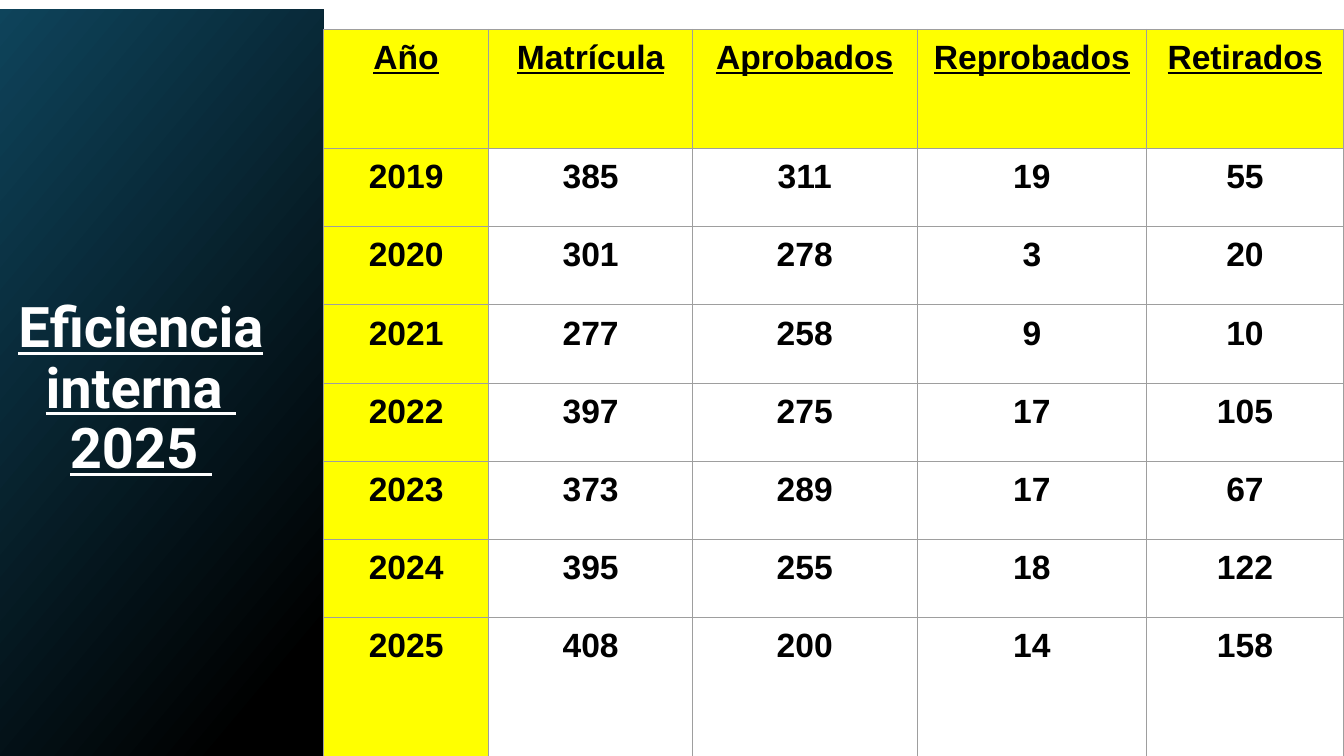
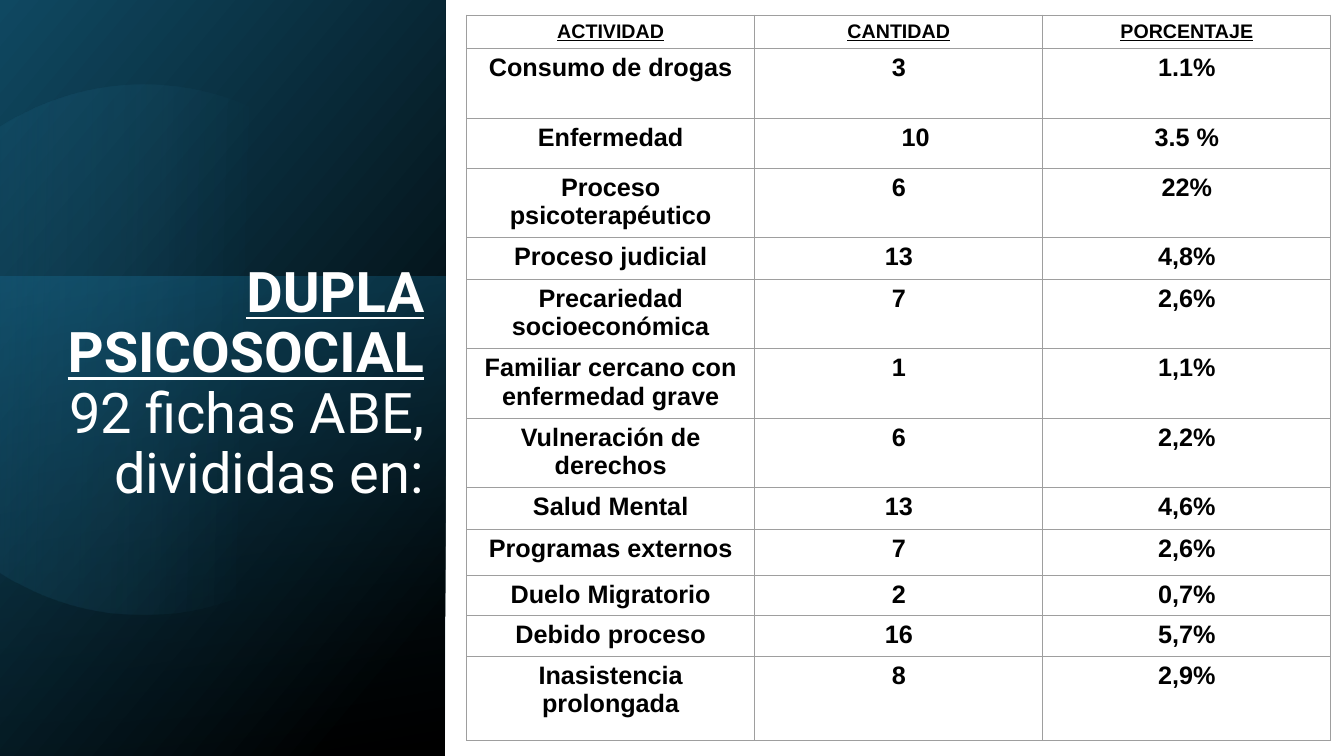
from math import cos, radians, sin

from lxml.etree import SubElement
from pptx import Presentation
from pptx.dml.color import RGBColor as RGB
from pptx.enum.shapes import MSO_SHAPE as SHAPE
from pptx.enum.text import MSO_ANCHOR as ANCHOR, MSO_AUTO_SIZE as AUTO, PP_ALIGN as ALIGN
from pptx.oxml.ns import qn
from pptx.util import Cm, Pt

HUE = {"white": "FFFFFF", "black": "000000", "yellow": "FFFF00", "rule": "9E9E9E",
       "navy": "0F4861", "teal": "156082", "deep": "0A3041", "sky": "43AFE2"}

# Gradient stops: position %, colour, opacity %
PANEL = [(0, "black", 100), (11, "black", 100), (100, "navy", 100)]
GLOW = [(0, "teal", 49), (100, "deep", 0)]
DISC = [(0, "sky", 0), (39, "sky", 0), (100, "navy", 25)]

YEARS = [
    ("Año", "Matrícula", "Aprobados", "Reprobados", "Retirados"),
    ("2019", "385", "311", "19", "55"),
    ("2020", "301", "278", "3", "20"),
    ("2021", "277", "258", "9", "10"),
    ("2022", "397", "275", "17", "105"),
    ("2023", "373", "289", "17", "67"),
    ("2024", "395", "255", "18", "122"),
    ("2025", "408", "200", "14", "158"),
]
CASES = [
    ("ACTIVIDAD", "CANTIDAD", "PORCENTAJE"),
    ("Consumo de drogas", "3", "1.1%"),
    ("Enfermedad", "10", "3.5 %"),
    ("Proceso psicoterapéutico", "6", "22%"),
    ("Proceso judicial", "13", "4,8%"),
    ("Precariedad socioeconómica", "7", "2,6%"),
    ("Familiar cercano con enfermedad grave", "1", "1,1%"),
    ("Vulneración de derechos", "6", "2,2%"),
    ("Salud Mental", "13", "4,6%"),
    ("Programas externos", "7", "2,6%"),
    ("Duelo Migratorio", "2", "0,7%"),
    ("Debido proceso", "16", "5,7%"),
    ("Inasistencia prolongada", "8", "2,9%"),
]
# Title lines: text, bold and underlined
YEAR_HEAD = [("Eficiencia interna ", True), ("2025 ", True)]
CASE_HEAD = [("DUPLA PSICOSOCIAL", True), ("92 fichas ABE, divididas en:", False)]

YEAR_COLS = [4.17, 5.13, 5.66, 5.79, 4.95]
YEAR_ROWS = [3] + [1.97] * 6 + [3.51]
CASE_COLS = [7.26] * 3
CASE_ROWS = [0.84, 1.76, 1.26, 1.75, 1.05, 1.75, 1.75, 1.75, 1.06, 1.16, 1.01, 1.01, 2.12]


def color(name):
    return RGB.from_string(HUE[name])


def style(run, font, size, hue, bold, under):
    f = run.font
    f.name, f.size, f.bold, f.underline = font, Pt(size), bold, under
    f.color.rgb = color(hue)


def shade(shape, stops, angle, turn, title):
    """Fill with a gradient, rotate, and place behind the title."""
    shape.shadow.inherit = False
    shape.line.fill.background()
    shape.fill.gradient()
    shape.fill.gradient_angle = angle
    grades = shape._element.spPr.find(".//" + qn("a:gsLst"))
    for old in list(grades):
        grades.remove(old)
    for pos, hue, alpha in stops:
        stop = SubElement(grades, qn("a:gs"), pos=str(pos * 1000))
        tint = SubElement(stop, qn("a:srgbClr"), val=HUE[hue])
        if alpha < 100:
            SubElement(tint, qn("a:alpha"), val=str(alpha * 1000))
    shape.rotation = turn
    title._element.addprevious(shape._element)


def add_rect(slide, box):
    return slide.shapes.add_shape(SHAPE.RECTANGLE, *map(Cm, box))


def add_panel(slide, box):
    rect = add_rect(slide, box)
    rect._element.spPr.find(qn("a:xfrm")).set("flipH", "1")
    shade(rect, PANEL, 310, 90, slide.shapes.title)


def add_disc(slide, x, y, radius, start, end, steps=120):
    """Draw a circle cut off by the chord between two angles."""
    turns = [radians(start + (end - start) * i / steps) for i in range(steps + 1)]
    dots = [(Cm(x + radius * cos(t)), Cm(y + radius * sin(t))) for t in turns]
    path = slide.shapes.build_freeform(*dots[0])
    path.add_line_segments(dots[1:], close=True)
    shade(path.convert_to_shape(), DISC, 280, 101.6, slide.shapes.title)


def set_title(slide, lines, box, align, top=0.13):
    title = slide.shapes.title
    title.left, title.top, title.width, title.height = map(Cm, box)
    frame = title.text_frame
    frame.word_wrap, frame.auto_size = True, AUTO.NONE
    frame.vertical_anchor = ANCHOR.MIDDLE
    frame.margin_left = frame.margin_right = Cm(0.25)
    frame.margin_top, frame.margin_bottom = Cm(top), Cm(0.13)
    para = frame.paragraphs[0]
    para.alignment, para.line_spacing = align, 0.9
    for i, (text, strong) in enumerate(lines):
        if i:
            para.add_line_break()
        run = para.add_run()
        run.text = text
        style(run, "Roboto", 40, "white", strong, strong)


def set_cell(cell, text, size, under, pad, fill):
    cell.margin_left = cell.margin_right = Cm(0.25)
    cell.margin_top = cell.margin_bottom = Cm(pad)
    para = cell.text_frame.paragraphs[0]
    para.alignment = ALIGN.CENTER
    run = para.add_run()
    run.text = text
    style(run, "Arial", size, "black", True, under)
    props = cell._tc.get_or_add_tcPr()
    for side in "LRTB":
        edge = SubElement(props, qn("a:ln" + side), w=str(Pt(0.75)))
        paint = SubElement(edge, qn("a:solidFill"))
        SubElement(paint, qn("a:srgbClr"), val=HUE["rule"])
    if fill:
        cell.fill.solid()
        cell.fill.fore_color.rgb = color(fill)
    else:
        cell.fill.background()


def add_grid(slide, data, left, top, cols, rows, sizes, pad, mark=None):
    """Add a table; mark is the fill of its first row and column."""
    box = map(Cm, (left, top, sum(cols), sum(rows)))
    grid = slide.shapes.add_table(len(rows), len(cols), *box).table
    grid.first_row = grid.horz_banding = False
    for col, width in zip(grid.columns, cols):
        col.width = Cm(width)
    for r, (row, height) in enumerate(zip(data, rows)):
        grid.rows[r].height = Cm(height)
        for c, text in enumerate(row):
            fill = None if r and c else mark
            set_cell(grid.cell(r, c), text, sizes[r > 0], r == 0, pad, fill)
    return grid


def add_years(slide):
    set_title(slide, YEAR_HEAD, (-0.79, 4.27, 8.69, 9.8), ALIGN.CENTER, top=1.45)
    add_panel(slide, (-6.25, 4.95, 19.1, 9.7))
    add_grid(slide, YEARS, 8.15, 0.74, YEAR_COLS, YEAR_ROWS, (24, 24), 0.25, "yellow")


def add_cases(slide):
    title = slide.shapes.title
    set_title(slide, CASE_HEAD, (0.25, 4.8, 10.69, 9.8), ALIGN.RIGHT)
    add_panel(slide, (-3.94, 3.94, 19.1, 11.23))
    shade(add_rect(slide, (-0.43, 7.39, 12.09, 11.23)), GLOW, 190, 270, title)
    add_disc(slide, 4.6, 10.01, 6.68, 135.5, 381.3)
    grid = add_grid(slide, CASES, 11.76, 0.38, CASE_COLS, CASE_ROWS, (14, 18), 0.13)
    grid.cell(2, 1).margin_left = Cm(1.1)


def main():
    deck = Presentation()
    deck.slide_width, deck.slide_height = Cm(33.87), Cm(19.05)
    for build in (add_years, add_cases):
        build(deck.slides.add_slide(deck.slide_layouts[5]))
    deck.save("out.pptx")


if __name__ == "__main__":
    main()
